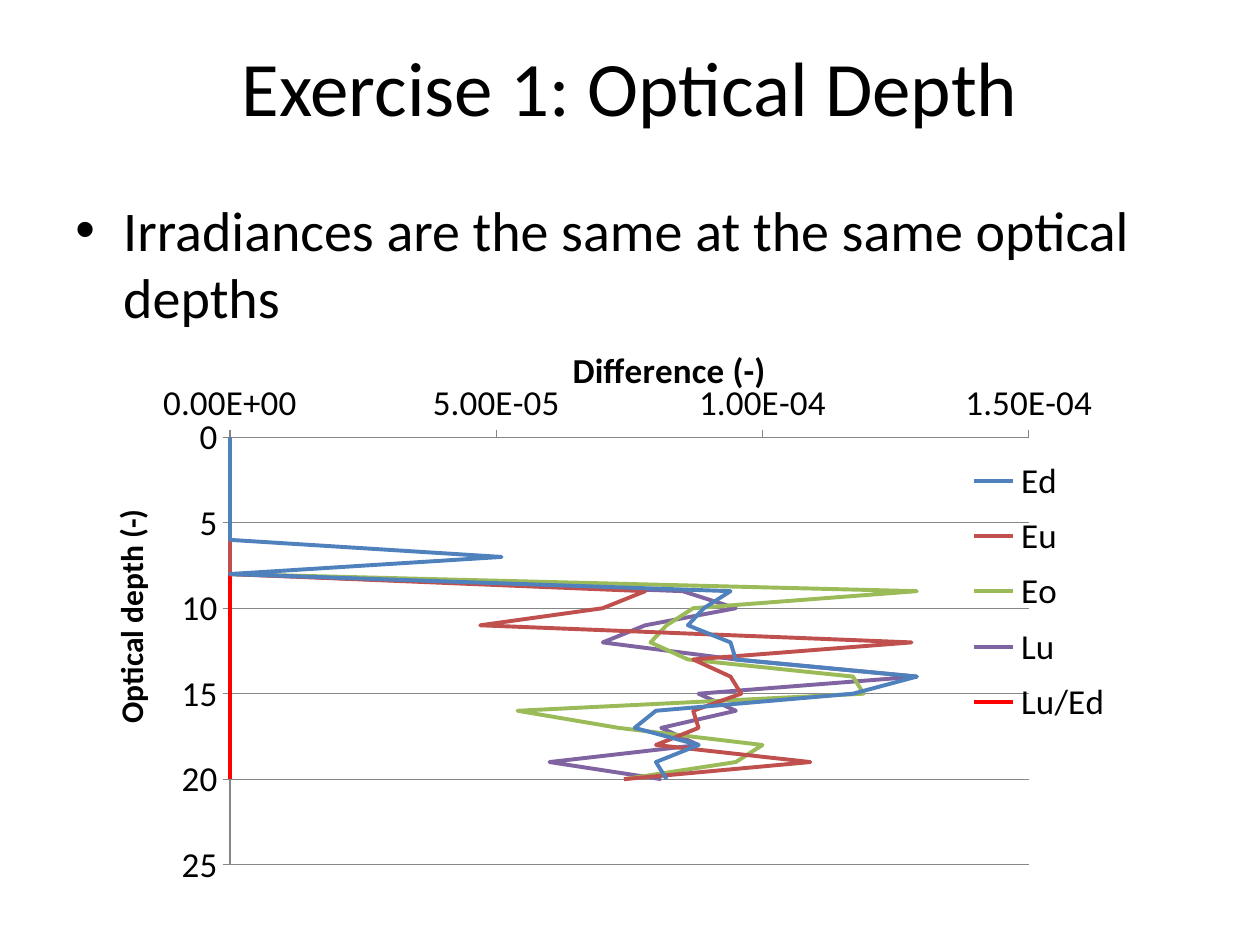
from lxml import etree
from pptx import Presentation
from pptx.chart.data import XyChartData
from pptx.dml.color import RGBColor
from pptx.enum.chart import XL_CHART_TYPE, XL_LEGEND_POSITION, XL_TICK_MARK
from pptx.enum.text import MSO_ANCHOR, PP_ALIGN
from pptx.oxml.ns import qn
from pptx.util import Inches, Pt

SCATTER = XL_CHART_TYPE.XY_SCATTER_LINES_NO_MARKERS
LEGEND_RIGHT = XL_LEGEND_POSITION.RIGHT
TICK_OUT, TICK_NONE = XL_TICK_MARK.OUTSIDE, XL_TICK_MARK.NONE
MIDDLE, TOP = MSO_ANCHOR.MIDDLE, MSO_ANCHOR.TOP
CENTER, LEFT = PP_ALIGN.CENTER, PP_ALIGN.LEFT

FONT = "Calibri"
COLORS = {
    "text": "000000", "axis": "868686",
    "Ed": "4F81BD", "Eu": "C0504D", "Eo": "9BBB59", "Lu": "8064A2",
    "Lu/Ed": "FF0000",
}
WIDTH, HEIGHT = Inches(10), Inches(7.5)

# Boxes as shares of the slide: left, top, width, height
TITLE_BOX = (0.05, 0.007, 0.9, 0.167)
BODY_BOX = (0.05, 0.2, 0.9, 0.66)
CHART_BOX = (0.074, 0.347, 0.816, 0.6)

# Differences in millionths at optical depths 0 to 20
LAST_DEPTH = 20
ZEROS = [0] * 9
DIFFERENCES = {
    "Ed": [0] * 7 + [51, 0, 94, 89, 86, 94, 95, 129, 117, 80, 76, 88, 80, 82],
    "Eu": ZEROS + [78, 70, 47, 128, 87, 94, 96, 87, 88, 80, 109, 74],
    "Eo": ZEROS + [129, 87, 82, 79, 86, 117, 119, 54, 73, 100, 95, 74],
    "Lu": ZEROS + [85, 95, 78, 70, 95, 129, 88, 95, 81, 88, 60, 81],
    "Lu/Ed": [0] * (LAST_DEPTH + 1),
}


def color(name):
    return RGBColor.from_string(COLORS[name])


def slide_box(box):
    left, top, width, height = box
    return (int(left * WIDTH), int(top * HEIGHT),
            int(width * WIDTH), int(height * HEIGHT))


def style_font(font, size, bold=False):
    font.name, font.size, font.bold = FONT, Pt(size), bold
    font.color.rgb = color("text")


def add_text(slide, box, text, size, align, anchor):
    frame = slide.shapes.add_textbox(*slide_box(box)).text_frame
    frame.word_wrap = True
    frame.vertical_anchor = anchor
    frame.text = text
    paragraph = frame.paragraphs[0]
    paragraph.alignment = align
    style_font(paragraph.runs[0].font, size)
    return paragraph


def add_bullet_body(slide, box, text):
    size = 32
    paragraph = add_text(slide, box, text, size, LEFT, TOP)
    paragraph.space_before = Pt(0.2 * size)
    properties = paragraph._p.get_or_add_pPr()
    indent = Inches(0.38)
    properties.set("marL", str(indent))
    properties.set("indent", str(-indent))
    etree.SubElement(properties, qn("a:buFont")).set("typeface", "Arial")
    etree.SubElement(properties, qn("a:buChar")).set("char", "•")


def place_in_chart(element, shares, after=None, inner=False):
    """Set a manual layout, in shares of the chart, behind the child `after`."""
    for old in element.findall(qn("c:layout")):
        element.remove(old)
    layout = etree.Element(qn("c:layout"))
    manual = etree.SubElement(layout, qn("c:manualLayout"))
    settings = [("layoutTarget", "inner")] if inner else []
    settings += [("xMode", "edge"), ("yMode", "edge")]
    settings += zip("xywh", shares)
    for tag, value in settings:
        etree.SubElement(manual, qn(f"c:{tag}")).set("val", str(value))
    if after:
        element.find(qn(after)).addnext(layout)
    else:
        element.insert(0, layout)


def style_axis(axis, title, title_size, title_place, maximum, step, number_format):
    axis.minimum_scale, axis.maximum_scale = 0, maximum
    axis.major_unit = step
    axis.major_tick_mark, axis.minor_tick_mark = TICK_OUT, TICK_NONE
    axis.tick_labels.number_format = number_format
    axis.tick_labels.number_format_is_linked = False
    axis.format.line.color.rgb = color("axis")
    axis.format.line.width = Pt(0.75)
    frame = axis.axis_title.text_frame
    frame.text = title
    style_font(frame.paragraphs[0].runs[0].font, title_size, bold=True)
    place_in_chart(axis.axis_title._element, title_place, after="c:tx")


def add_depth_chart(slide, box):
    data = XyChartData()
    for name, differences in DIFFERENCES.items():
        profile = data.add_series(name)
        for depth, difference in enumerate(differences):
            profile.add_data_point(difference / 1e6, depth)
    chart = slide.shapes.add_chart(SCATTER, *slide_box(box), data).chart
    chart.has_title = False
    style_font(chart.font, 20)
    place_in_chart(chart._chartSpace.chart.plotArea,
                   (0.133, 0.193, 0.777, 0.754), inner=True)

    # Profiles
    for profile in chart.plots[0].series:
        profile.smooth = False
        profile.format.line.color.rgb = color(profile.name)
        profile.format.line.width = Pt(2.25)

    # Axes: depth grows downwards
    difference_axis, depth_axis = chart.category_axis, chart.value_axis
    style_axis(difference_axis, "Difference (-)", 20, (0.46, 0.02),
               0.00015, 0.00005, "0.00E+00")
    style_axis(depth_axis, "Optical depth (-)", 18, (0.01, 0.31), 25, 5, "#,##0")
    difference_axis.has_major_gridlines = False
    depth_axis.reverse_order = True
    depth_axis.has_major_gridlines = True
    depth_axis.major_gridlines.format.line.color.rgb = color("axis")
    depth_axis.major_gridlines.format.line.width = Pt(0.75)

    # Legend
    chart.has_legend = True
    chart.legend.position = LEGEND_RIGHT
    chart.legend.include_in_layout = False
    style_font(chart.legend.font, 20)
    place_in_chart(chart.legend._element, (0.84, 0.21, 0.16, 0.51),
                   after="c:legendPos")


def main():
    presentation = Presentation()
    presentation.slide_width, presentation.slide_height = WIDTH, HEIGHT
    slide = presentation.slides.add_slide(presentation.slide_layouts[6])
    add_text(slide, TITLE_BOX, "Exercise 1: Optical Depth", 44, CENTER, MIDDLE)
    add_bullet_body(slide, BODY_BOX,
                    "Irradiances are the same at the same optical depths")
    add_depth_chart(slide, CHART_BOX)
    presentation.save("out.pptx")


if __name__ == "__main__":
    main()
